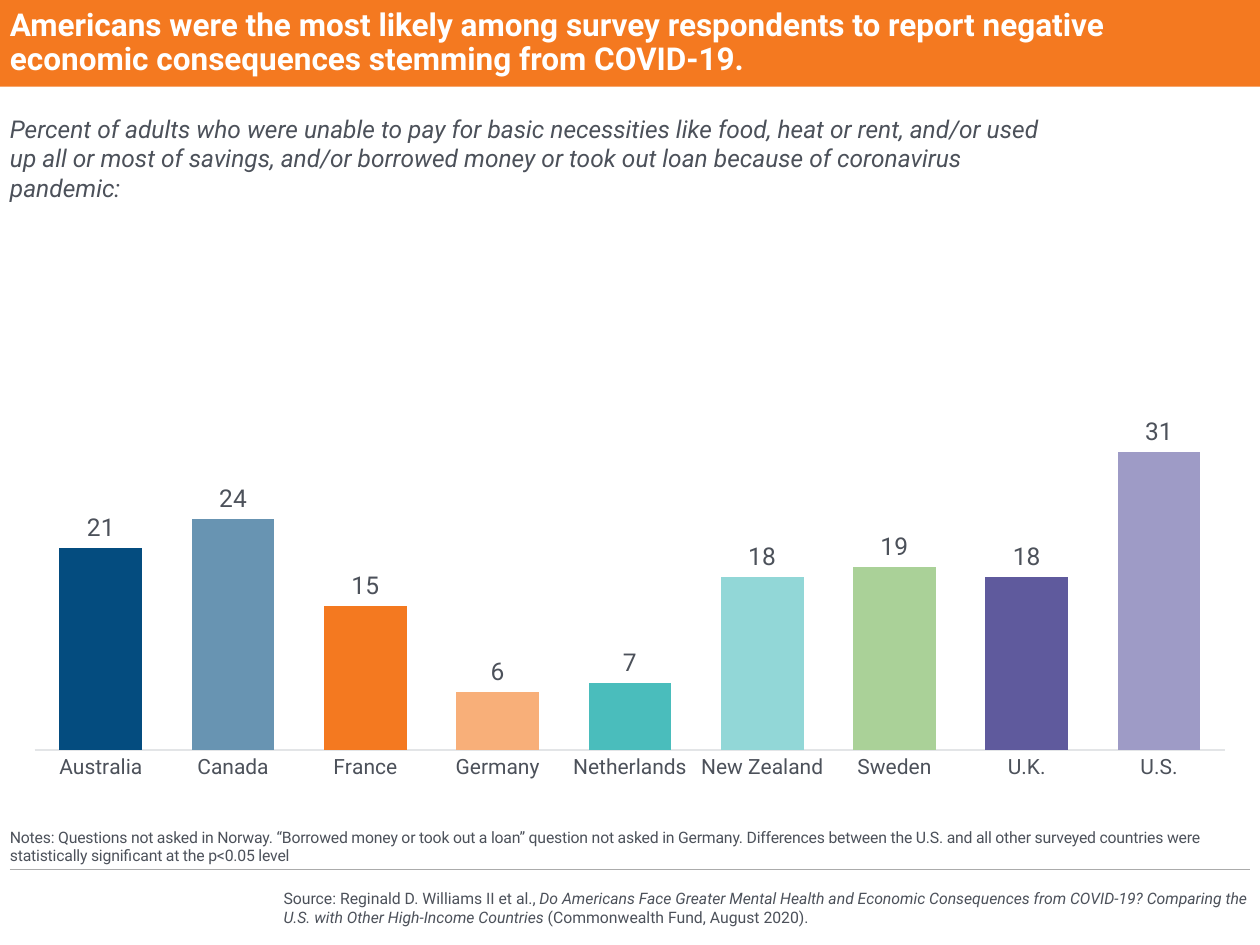
from lxml import etree
from pptx import Presentation
from pptx.chart.data import CategoryChartData
from pptx.dml.color import RGBColor
from pptx.enum.chart import XL_CHART_TYPE as ChartType, XL_LABEL_POSITION as LabelPosition, XL_TICK_MARK as TickMark
from pptx.enum.shapes import MSO_CONNECTOR as Connector, MSO_SHAPE as Shape
from pptx.enum.text import MSO_ANCHOR as Anchor, MSO_AUTO_SIZE as AutoSize, PP_ALIGN as Align
from pptx.oxml import parse_xml
from pptx.oxml.ns import nsdecls, qn
from pptx.util import Pt

COLORS = {"text": "4C515A", "banner": "F47920", "white": "FFFFFF", "rule": "ABABAB", "axis": "E3E5E7"}
FONT = "Roboto"
MARGIN = 5.67
CONTENT_WIDTH = 720 - 2 * MARGIN
BANNER_HEIGHT = 49.5

COUNTRIES = [
    ("Australia", 21, "044C7F"),
    ("Canada", 24, "6894B2"),
    ("France", 15, "F47920"),
    ("Germany", 6, "F8AF79"),
    ("Netherlands", 7, "4ABDBC"),
    ("New Zealand", 18, "92D7D7"),
    ("Sweden", 19, "AAD198"),
    ("U.K.", 18, "5F5A9D"),
    ("U.S.", 31, "9E9BC6"),
]


def style_font(font, size, color="text"):
    font.name = FONT
    font.size = Pt(size)
    font.color.rgb = RGBColor.from_string(COLORS[color])


def write_text(shape, box, anchor, runs, size, color="text", bold=False, fit=AutoSize.NONE, line_spacing=1.0):
    shape.left, shape.top, shape.width, shape.height = [Pt(length) for length in box]
    frame = shape.text_frame
    frame.word_wrap = True
    frame.auto_size = fit
    frame.vertical_anchor = anchor
    frame.margin_left = frame.margin_top = frame.margin_right = frame.margin_bottom = 0
    paragraph = frame.paragraphs[0]
    paragraph.alignment = Align.LEFT
    paragraph.line_spacing = line_spacing
    paragraph.space_before = Pt(0)
    for text, italic in runs:
        run = paragraph.add_run()
        run.text = text
        style_font(run.font, size, color)
        run.font.bold = bold
        run.font.italic = italic
    return paragraph


presentation = Presentation()
presentation.slide_width, presentation.slide_height = Pt(720), Pt(540)
slide = presentation.slides.add_slide(presentation.slide_layouts[1])
title, notes = slide.placeholders

banner = slide.shapes.add_shape(Shape.RECTANGLE, 0, 0, Pt(720), Pt(BANNER_HEIGHT))
banner.shadow.inherit = False
banner.fill.solid()
banner.fill.fore_color.rgb = RGBColor.from_string(COLORS["banner"])
banner.line.fill.background()
title.element.addprevious(banner.element)

rule = slide.shapes.add_connector(Connector.STRAIGHT, Pt(MARGIN), Pt(497), Pt(720 - MARGIN), Pt(497))
rule.line.color.rgb = RGBColor.from_string(COLORS["rule"])
rule.line.width = Pt(0.75)
etree.SubElement(rule.element.spPr, qn("a:effectLst"))

write_text(
    title, (MARGIN, 0, CONTENT_WIDTH, BANNER_HEIGHT), Anchor.MIDDLE,
    [("Americans were the most likely among survey respondents to report negative "
      "economic consequences stemming from COVID-19.", False)],
    18, "white", bold=True, line_spacing=0.9,
)

notes_paragraph = write_text(
    notes, (MARGIN, 455, CONTENT_WIDTH, 39), Anchor.BOTTOM,
    [("Notes: Questions not asked in Norway. “Borrowed money or took out a loan” question not asked in Germany. "
      "Differences between the U.S. and all other surveyed countries were statistically significant "
      "at the p<0.05 level", False)],
    9, line_spacing=0.9,
)
notes_paragraph.space_after = Pt(6)
notes_properties = notes_paragraph._p.get_or_add_pPr()
notes_properties.set("marL", "0")
notes_properties.set("indent", "0")
etree.SubElement(notes_properties, qn("a:buNone"))
notes_paragraph.runs[0].font._element.set("spc", "-10")

subtitle = slide.shapes.add_textbox(0, 0, 0, 0)
write_text(
    subtitle, (MARGIN, 65, 600, 34), Anchor.TOP,
    [("Percent of adults who were unable to pay for basic necessities like food, heat or rent, and/or used up "
      "all or most of savings, and/or borrowed money or took out loan because of coronavirus pandemic:", True)],
    14, fit=AutoSize.SHAPE_TO_FIT_TEXT,
)

source = slide.shapes.add_textbox(0, 0, 0, 0)
write_text(
    source, (162, 507.8, 558 - MARGIN, 21.6), Anchor.MIDDLE,
    [("Source: Reginald D. Williams II et al., ", False),
     ("Do Americans Face Greater Mental Health and Economic Consequences from COVID-19? "
      "Comparing the U.S. with Other High-Income Countries ", True),
     ("(Commonwealth Fund, August 2020).", False)],
    9, fit=AutoSize.SHAPE_TO_FIT_TEXT,
)

chart_data = CategoryChartData()
chart_data.categories = [name for name, value, color in COUNTRIES]
chart_data.add_series("Series 1", [value for name, value, color in COUNTRIES])
chart = slide.shapes.add_chart(
    ChartType.COLUMN_CLUSTERED, Pt(MARGIN), Pt(92), Pt(CONTENT_WIDTH), Pt(362), chart_data
).chart
chart.has_legend = False
chart.has_title = False
style_font(chart.font, 14)

value_axis = chart.value_axis
value_axis.minimum_scale, value_axis.maximum_scale = 0, 60
value_axis.has_major_gridlines = False
value_axis.visible = False
category_axis = chart.category_axis
category_axis.major_tick_mark = category_axis.minor_tick_mark = TickMark.NONE
category_axis.format.line.color.rgb = RGBColor.from_string(COLORS["axis"])
category_axis.format.line.width = Pt(0.75)
style_font(category_axis.tick_labels.font, 12)

plot = chart.plots[0]
plot.gap_width = 60
plot.vary_by_categories = False
plot.has_data_labels = True
labels = plot.data_labels
labels.show_value = True
labels.position = LabelPosition.OUTSIDE_END
style_font(labels.font, 14)
for index, (name, value, color) in enumerate(COUNTRIES):
    fill = plot.series[0].points[index].format.fill
    fill.solid()
    fill.fore_color.rgb = RGBColor.from_string(color)

plot_area = chart._chartSpace.chart.plotArea
for layout in plot_area.findall(qn("c:layout")):
    plot_area.remove(layout)
plot_area.insert(0, parse_xml(
    f'<c:layout {nsdecls("c")}><c:manualLayout><c:layoutTarget val="inner"/>'
    '<c:xMode val="edge"/><c:yMode val="edge"/>'
    '<c:x val="0.02"/><c:y val="0.02"/><c:w val="0.96"/><c:h val="0.91"/>'
    '</c:manualLayout></c:layout>'
))

presentation.save("out.pptx")
